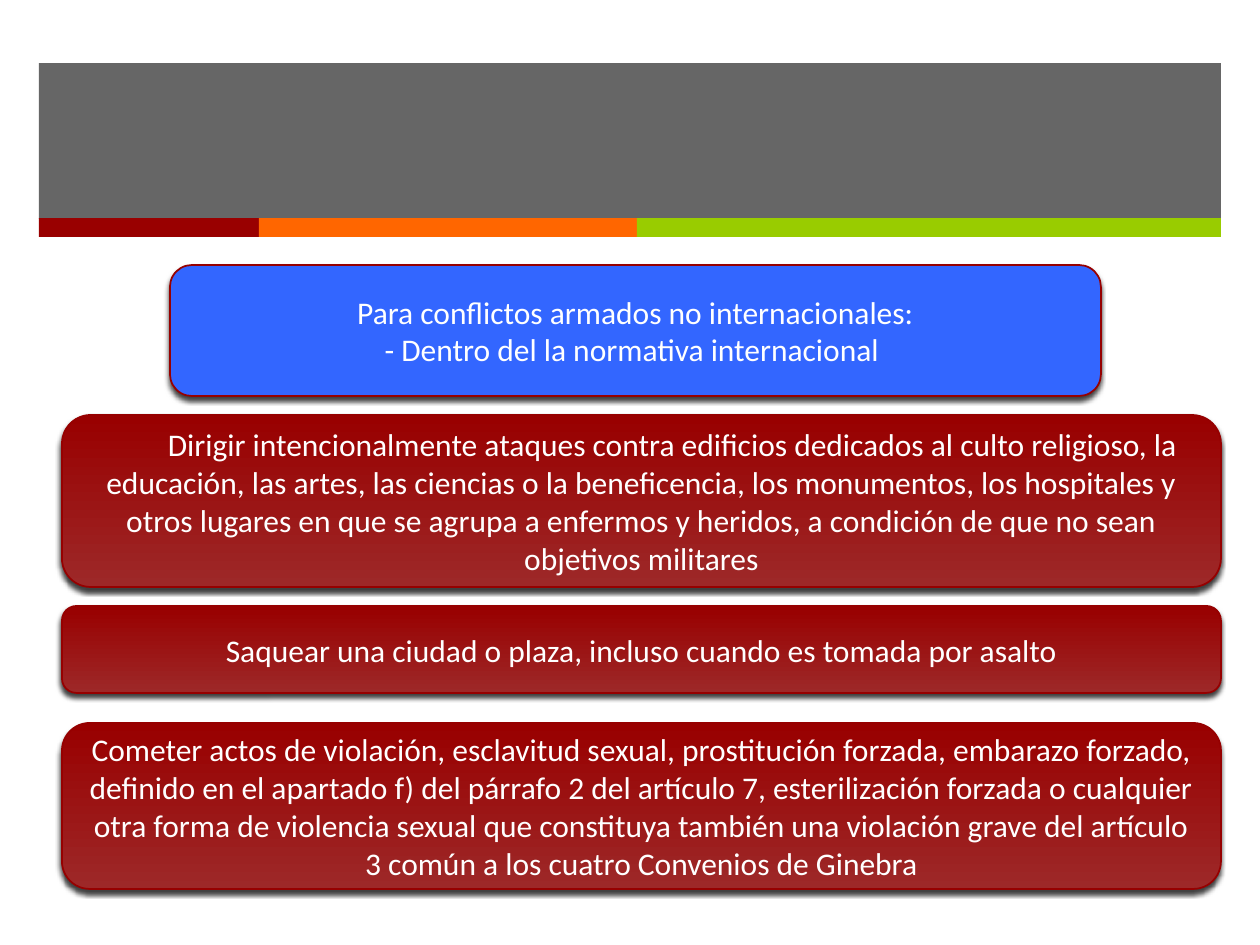
from lxml.etree import SubElement
from pptx import Presentation
from pptx.dml.color import RGBColor
from pptx.enum.shapes import MSO_SHAPE
from pptx.enum.text import MSO_ANCHOR, PP_ALIGN
from pptx.oxml.ns import qn
from pptx.util import Emu, Pt

SCALE = 914400 / 126
FONT = "Calibri"
WHITE, BLACK = "FFFFFF", "000000"
GRAY, RED, ORANGE, GREEN = "262626", "990000", "FF6600", "99CC00"
BLUE, BRICK, BORDER = "3366FF", "9D2828", "960000"


def px(length):
    """Turn whole pixels into EMU."""
    return Emu(round(length * SCALE))


def color(value):
    """Turn a hex string into a colour."""
    return RGBColor.from_string(value)


class SlideBuilder:
    """Hold the text style and the current slide."""

    def __init__(self, page, font=FONT, size=18):
        """Keep the page and the text style."""
        self.page = page
        self.font = font
        self.size = size

    def shape(self, kind, left, top, width, height):
        """Add a preset shape without line or inherited shadow."""
        box = self.page.shapes.add_shape(
            kind, px(left), px(top), px(width), px(height))
        box.shadow.inherit = False
        box.line.fill.background()
        return box

    def band(self, left, top, width, height, fill, opacity=100):
        """Add a flat rectangle, optionally translucent."""
        box = self.shape(MSO_SHAPE.RECTANGLE, left, top, width, height)
        box.fill.solid()
        box.fill.fore_color.rgb = color(fill)
        if opacity < 100:
            value = box._element.spPr.find(qn("a:solidFill"))[0]
            SubElement(value, qn("a:alpha"), val=str(opacity * 1000))

    def shadow(self, box):
        """Give a shape a soft dark shadow."""
        effects = box._element.spPr.find(qn("a:effectLst"))
        outer = SubElement(
            effects, qn("a:outerShdw"), blurRad=str(Pt(3)), dist=str(Pt(2)),
            dir=str(110 * 60000), rotWithShape="0")
        value = SubElement(outer, qn("a:srgbClr"), val=BLACK)
        SubElement(value, qn("a:alpha"), val="75000")

    def card(self, left, top, width, height, lines, fills, indent=0):
        """Add a rounded card with centred text and one or two fill colours."""
        box = self.shape(MSO_SHAPE.ROUNDED_RECTANGLE, left, top, width, height)
        if len(fills) == 1:
            box.fill.solid()
            box.fill.fore_color.rgb = color(fills[0])
        else:
            box.fill.gradient()
            box.fill.gradient_angle = 90
            for stop, fill in zip(box.fill.gradient_stops, fills):
                stop.color.rgb = color(fill)
        box.line.color.rgb = color(BORDER)
        box.line.width = Pt(1)
        self.shadow(box)
        self.text(box.text_frame, lines, indent)

    def text(self, frame, lines, indent):
        """Write centred lines into a text frame."""
        frame.word_wrap = True
        frame.vertical_anchor = MSO_ANCHOR.MIDDLE
        for index, line in enumerate(lines):
            para = frame.add_paragraph() if index else frame.paragraphs[0]
            para.alignment = PP_ALIGN.CENTER
            if indent:
                para._p.get_or_add_pPr().set("indent", str(px(indent)))
            span = para.add_run()
            span.text = line
            span.font.name = self.font
            span.font.size = Pt(self.size)
            span.font.color.rgb = color(WHITE)


def main():
    """Build the slide and save it."""
    deck = Presentation()
    deck.slide_width, deck.slide_height = px(1260), px(945)
    builder = SlideBuilder(deck.slides.add_slide(deck.slide_layouts[6]))

    builder.band(39, 63, 1182, 156, GRAY, opacity=70)
    left = 39
    for width, fill in ((220, RED), (378, ORANGE), (584, GREEN)):
        builder.band(left, 218, width, 19, fill)
        left += width

    builder.card(170, 265, 931, 131, [
        "Para conflictos armados no internacionales:",
        "- Dentro del la normativa internacional ",
    ], [BLUE])

    crimes = (
        (415, 172, 62,
         "Dirigir intencionalmente ataques contra edificios dedicados al culto "
         "religioso, la educación, las artes, las ciencias o la beneficencia, "
         "los monumentos, los hospitales y otros lugares en que se agrupa a "
         "enfermos y heridos, a condición de que no sean objetivos militares"),
        (606, 87, 0,
         "Saquear una ciudad o plaza, incluso cuando es tomada por asalto"),
        (723, 166, 0,
         "Cometer actos de violación, esclavitud sexual, prostitución forzada, "
         "embarazo forzado, definido en el apartado f) del párrafo 2 del "
         "artículo 7, esterilización forzada o cualquier otra forma de "
         "violencia sexual que constituya también una violación grave del "
         "artículo 3 común a los cuatro Convenios de Ginebra"),
    )
    for top, height, indent, crime in crimes:
        builder.card(62, top, 1159, height, [crime], [BRICK, RED], indent)

    deck.save("out.pptx")


if __name__ == "__main__":
    main()
